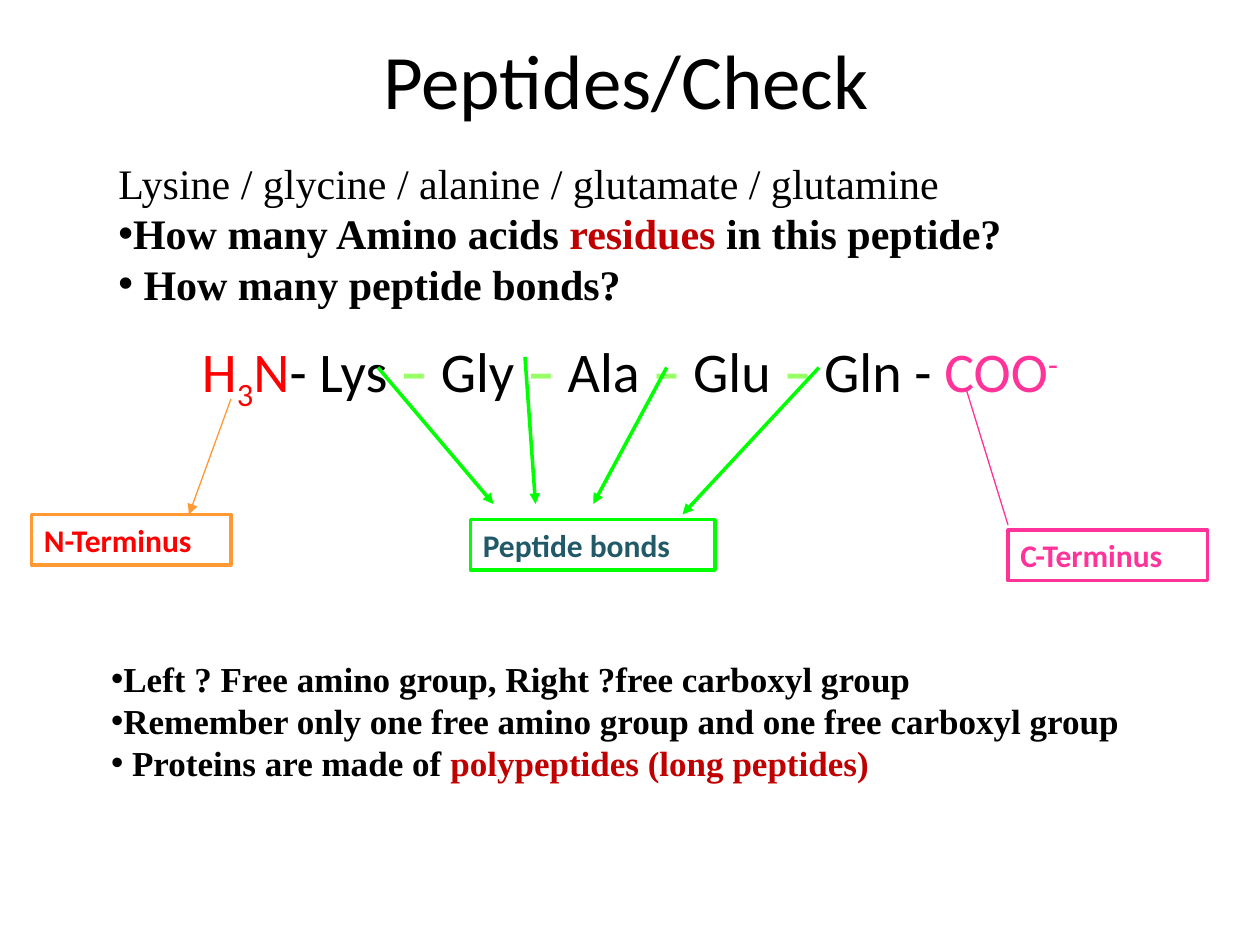
import lxml.etree
import pptx
import pptx.dml.color
import pptx.enum.shapes
import pptx.enum.text
import pptx.oxml.ns
import pptx.util

SLIDE_WIDTH, SLIDE_HEIGHT = 10, 7.5
GRID_COLUMNS, GRID_ROWS = 120, 90
SANS, SERIF = "Calibri", "Times New Roman"
ALIGN = pptx.enum.text.PP_ALIGN
ANCHOR = pptx.enum.text.MSO_ANCHOR

COLORS = {
    "black": "000000",
    "red": "FF0000",
    "dark red": "C00000",
    "lime": "99FF66",
    "green": "00FF00",
    "teal": "215968",
    "orange": "FF9933",
    "pink": "FF3399",
}


def rgb(name):
    return pptx.dml.color.RGBColor.from_string(COLORS[name])


def column(count):
    return pptx.util.Inches(SLIDE_WIDTH * count / GRID_COLUMNS)


def row(count):
    return pptx.util.Inches(SLIDE_HEIGHT * count / GRID_ROWS)


def grid_area(left, top, width, height):
    return column(left), row(top), column(width), row(height)


def add_child(parent, tag, **attributes):
    return lxml.etree.SubElement(parent, pptx.oxml.ns.qn(tag), attributes)


def style_run(run, font, size, color="black", bold=False, baseline=0):
    """Format a run; baseline is its raise in percent, negative for subscript."""
    run.font.name = font
    run.font.size = pptx.util.Pt(size)
    run.font.bold = bold
    run.font.color.rgb = rgb(color)
    if baseline:
        run.font._element.set("baseline", str(baseline * 1000))


def add_text(slide, area, lines, font, size, align, anchor=ANCHOR.TOP):
    """Each line is (bulleted, segments); a segment is (text, style of its run)."""
    frame = slide.shapes.add_textbox(*grid_area(*area)).text_frame
    frame.word_wrap = True
    frame.vertical_anchor = anchor
    for index, (bulleted, segments) in enumerate(lines):
        paragraph = frame.add_paragraph() if index else frame.paragraphs[0]
        paragraph.alignment = align
        if bulleted:
            properties = paragraph._p.get_or_add_pPr()
            add_child(properties, "a:buFont", typeface="Arial")
            add_child(properties, "a:buChar", char="•")
        for text, style in segments:
            run = paragraph.add_run()
            run.text = text
            style_run(run, font, size, **style)
    return frame


def add_label(slide, area, text, text_color, border_color):
    label = slide.shapes.add_shape(
        pptx.enum.shapes.MSO_SHAPE.RECTANGLE, *grid_area(*area))
    label.shadow.inherit = False
    label.fill.background()
    label.line.color.rgb = rgb(border_color)
    label.line.width = pptx.util.Pt(2)
    label.text_frame.text = text
    label.text_frame.vertical_anchor = ANCHOR.TOP
    paragraph = label.text_frame.paragraphs[0]
    paragraph.alignment = ALIGN.LEFT
    style_run(paragraph.runs[0], SANS, 18, text_color, bold=True)


def add_pointer(slide, start, end, color, width, arrow=True):
    pointer = slide.shapes.add_connector(
        pptx.enum.shapes.MSO_CONNECTOR.STRAIGHT,
        column(start[0]), row(start[1]), column(end[0]), row(end[1]))
    pointer.line.color.rgb = rgb(color)
    pointer.line.width = pptx.util.Pt(width)
    if arrow:
        add_child(pointer.line._get_or_add_ln(), "a:tailEnd", type="triangle")
    add_child(pointer._element.spPr, "a:effectLst")


def add_peptide(slide):
    bond = ("–", {"color": "lime", "bold": True})
    chain = [("H", {"color": "red"}), ("3", {"color": "red", "baseline": -25}),
             ("N", {"color": "red"}), ("- Lys ", {})]
    for residue in (" Gly ", " Ala ", " Glu ", " Gln - "):
        chain += [bond, (residue, {})]
    chain += [("COO", {"color": "pink"}), ("-", {"color": "pink", "baseline": 30})]
    add_text(slide, (6, 31.5, 108, 8), [(False, chain)], SANS, 32, ALIGN.CENTER)


def add_bond_arrows(slide):
    for start, end in (((36, 35), (47, 48)), ((50, 34), (51, 48)),
                       ((63.5, 35), (56.5, 48)), ((78, 35), (65, 49))):
        add_pointer(slide, start, end, "green", 2)


def main():
    deck = pptx.Presentation()
    deck.slide_width = pptx.util.Inches(SLIDE_WIDTH)
    deck.slide_height = pptx.util.Inches(SLIDE_HEIGHT)
    slide = deck.slides.add_slide(deck.slide_layouts[6])
    bold = {"bold": True}
    highlight = {"bold": True, "color": "dark red"}

    title = add_text(slide, (6, 0, 108, 15), [(False, [("Peptides/Check", {})])],
                     SANS, 44, ALIGN.CENTER, ANCHOR.MIDDLE)
    title.margin_right = pptx.util.Inches(0.16)

    add_peptide(slide)
    add_bond_arrows(slide)
    add_label(slide, (44.8, 49.5, 23.3, 4.8), "Peptide bonds", "teal", "green")
    add_pointer(slide, (22, 38), (18, 49), "orange", 0.75)
    add_label(slide, (3, 49, 19, 4.8), "N-Terminus", "red", "orange")
    add_pointer(slide, (92, 37), (96, 50), "pink", 0.75, arrow=False)
    add_label(slide, (96, 50.5, 19, 4.8), "C-Terminus", "pink", "pink")

    add_text(slide, (9.4, 62, 104, 13.3), [
        (True, [("Left ? Free amino group, Right ?free carboxyl group", bold)]),
        (True, [("Remember only one free amino group and one free carboxyl group", bold)]),
        (True, [(" Proteins are made of ", bold),
                ("polypeptides (long peptides)", highlight)]),
    ], SERIF, 20, ALIGN.JUSTIFY)

    add_text(slide, (10.1, 14.4, 87.4, 19.8), [
        (False, [("Lysine / glycine / alanine / glutamate / glutamine", {})]),
        (True, [("How many Amino acids ", bold), ("residues", highlight),
                (" in this peptide?", bold)]),
        (True, [(" How many peptide bonds?", bold)]),
    ], SERIF, 24, ALIGN.JUSTIFY)

    deck.save("out.pptx")


if __name__ == "__main__":
    main()
